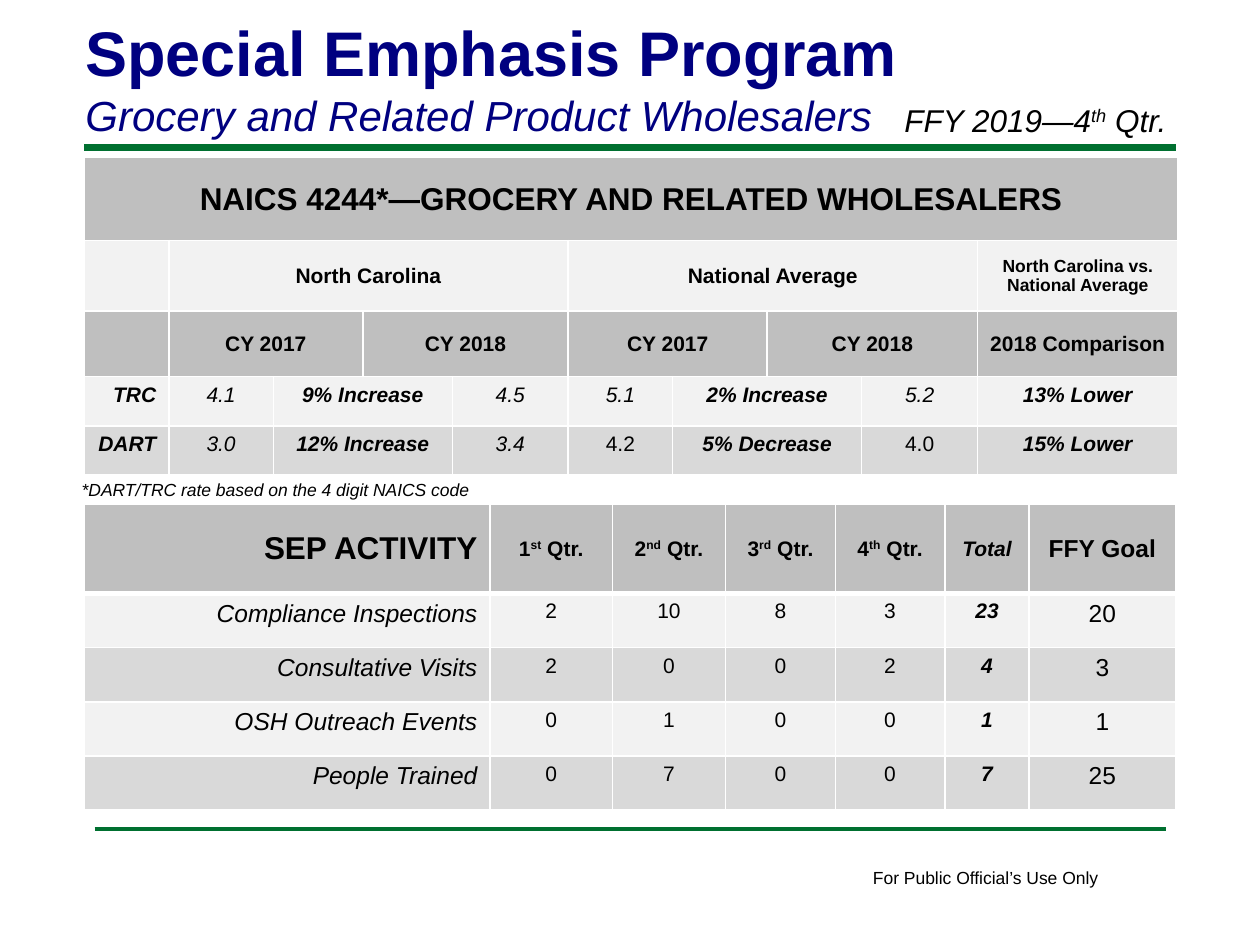
from lxml import etree
from pptx import Presentation
from pptx.dml.color import RGBColor
from pptx.enum.shapes import MSO_CONNECTOR
from pptx.enum.text import MSO_ANCHOR, MSO_AUTO_SIZE, PP_ALIGN
from pptx.oxml.ns import qn
from pptx.util import Inches, Pt

STRAIGHT = MSO_CONNECTOR.STRAIGHT
LEFT, CENTER, RIGHT = PP_ALIGN.LEFT, PP_ALIGN.CENTER, PP_ALIGN.RIGHT
MIDDLE, TOP = MSO_ANCHOR.MIDDLE, MSO_ANCHOR.TOP
GROW = MSO_AUTO_SIZE.SHAPE_TO_FIT_TEXT

FONT = "Arial"
BLACK = RGBColor(0, 0, 0)
NAVY = RGBColor(0x00, 0x00, 0x80)
GREEN = RGBColor(0x00, 0x70, 0x30)
HEAD = RGBColor(0xBF, 0xBF, 0xBF)
PALE = RGBColor(0xF2, 0xF2, 0xF2)
GRAY = RGBColor(0xD9, 0xD9, 0xD9)

RATE_COLS = [0.67, 0.83, 0.71, 0.71, 0.92, 0.83, 0.75, 0.75, 0.92, 1.59]
RATE_ROWS = [0.66, 0.56, 0.52, 0.39, 0.39]
RATE_FILLS = [HEAD, PALE, HEAD, PALE, GRAY]
RATE_SPANS = [(1, 1), (2, 2), (4, 1), (5, 1), (6, 2), (8, 1), (9, 1)]
RATES = [
    ["TRC", "4.1", "9% Increase", "4.5", "5.1", "2% Increase", "5.2", "13% Lower"],
    ["DART", "3.0", "12% Increase", "3.4", "4.2", "5% Decrease", "4.0", "15% Lower"],
]
PLAIN_RATES = ("4.2", "4.0")

WORK_COLS = [3.22, 0.97, 0.9, 0.87, 0.87, 0.67, 1.16]
WORK_ROWS = [0.71] + [0.43] * 4
WORK_FILLS = [HEAD, PALE, GRAY, PALE, GRAY]
WORK = [
    ["SEP ACTIVITY", "1^st^ Qtr.", "2^nd^ Qtr.", "3^rd^ Qtr.", "4^th^ Qtr.", "Total", "FFY Goal"],
    ["Compliance Inspections", "2", "10", "8", "3", "23", "20"],
    ["Consultative Visits", "2", "0", "0", "2", "4", "3"],
    ["OSH Outreach Events", "0", "1", "0", "0", "1", "1"],
    ["People Trained", "0", "7", "0", "0", "7", "25"],
]


def write(para, text, size=12, bold=False, italic=False, color=BLACK, align=LEFT):
    """Fill a paragraph with text, raising the parts between carets."""
    para.alignment = align
    for i, part in enumerate(text.split("^")):
        run = para.add_run()
        run.text = part
        font = run.font
        font.name, font.size = FONT, Pt(size)
        font.bold, font.italic = bold, italic
        font.color.rgb = color
        if i % 2:
            run._r.get_or_add_rPr().set("baseline", "30000")


def add_box(slide, x, y, w, h, wrap=True):
    """Add a text box and return its text frame."""
    frame = slide.shapes.add_textbox(Inches(x), Inches(y), Inches(w), Inches(h)).text_frame
    frame.word_wrap = wrap
    frame.auto_size = GROW
    return frame


def add_rule(slide, x, y, end, width):
    """Draw a level green rule."""
    rule = slide.shapes.add_connector(STRAIGHT, Inches(x), Inches(y), Inches(end), Inches(y))
    rule.line.color.rgb = GREEN
    rule.line.width = Pt(width)
    etree.SubElement(rule._element.spPr, qn("a:effectLst"))


def edge(cell, base):
    """Give a cell white borders, with its own width at the base."""
    props = cell._tc.get_or_add_tcPr()
    for side, width in (("L", 1), ("R", 1), ("T", 1), ("B", base)):
        line = etree.SubElement(props, qn("a:ln" + side), w=str(Pt(width)))
        fill = etree.SubElement(line, qn("a:solidFill"))
        etree.SubElement(fill, qn("a:srgbClr"), val="FFFFFF")


def add_grid(slide, top, cols, rows, fills, base=1):
    """Add an empty table with a fill for each row."""
    frame = slide.shapes.add_table(len(rows), len(cols), Inches(0.67), Inches(top),
                                   Inches(sum(cols)), Inches(sum(rows)))
    table = frame.table
    table.first_row = table.horz_banding = False
    for col, width in zip(table.columns, cols):
        col.width = Inches(width)
    for i, (row, height) in enumerate(zip(table.rows, rows)):
        row.height = Inches(height)
        for cell in row.cells:
            edge(cell, base if i == 0 else 1)
            cell.fill.solid()
            cell.fill.fore_color.rgb = fills[i]
    return table


def put(table, row, col, text, span=1, anchor=TOP, align=CENTER, **style):
    """Write one cell, merged over its span of columns."""
    cell = table.cell(row, col)
    if span > 1:
        cell.merge(table.cell(row, col + span - 1))
    cell.vertical_anchor = anchor
    write(cell.text_frame.paragraphs[0], text, align=align, **style)


def add_rates(slide):
    """Build the table of injury rates."""
    table = add_grid(slide, 1.25, RATE_COLS, RATE_ROWS, RATE_FILLS)
    head = {"anchor": MIDDLE, "bold": True}
    put(table, 0, 0, "NAICS 4244*—GROCERY AND RELATED WHOLESALERS", span=10, size=18, **head)
    put(table, 1, 1, "North Carolina", span=4, **head)
    put(table, 1, 5, "National Average", span=4, **head)
    put(table, 1, 9, "North Carolina vs. National Average", size=10, **head)
    for i, col in enumerate(range(1, 9, 2)):
        put(table, 2, col, f"CY {2017 + i % 2}", span=2, **head)
    put(table, 2, 9, "2018 Comparison", **head)
    for row, (name, *values) in enumerate(RATES, 3):
        put(table, row, 0, name, align=RIGHT, bold=True, italic=True)
        for (col, span), text in zip(RATE_SPANS, values):
            put(table, row, col, text, span=span, bold=col in (2, 6, 9),
                italic=text not in PLAIN_RATES)


def add_work(slide):
    """Build the table of program activity."""
    table = add_grid(slide, 4, WORK_COLS, WORK_ROWS, WORK_FILLS, base=3)
    for row, line in enumerate(WORK):
        head = row == 0
        for col, text in enumerate(line):
            name, total, goal = col == 0, col == 5, col == 6
            size = 18 if name and head else 14 if name or goal else 12
            put(table, row, col, text, size=size, bold=head or total,
                italic=total or (name and not head),
                align=RIGHT if name else CENTER, anchor=MIDDLE if head else TOP)


def main():
    """Build and save the slide."""
    deck = Presentation()
    deck.slide_width, deck.slide_height = Inches(10), Inches(7.5)
    slide = deck.slides.add_slide(deck.slide_layouts[6])
    add_rule(slide, 0.67, 1.17, 9.33, 4)
    add_rule(slide, 0.75, 6.58, 9.25, 2)
    foot = add_box(slide, 6.83, 6.83, 2.01, 0.27, wrap=False)
    write(foot.paragraphs[0], "For Public Official’s Use Only", size=10)
    title = add_box(slide, 0.58, 0.06, 8.25, 1.11)
    write(title.paragraphs[0], "Special Emphasis Program", size=36, bold=True, color=NAVY)
    write(title.add_paragraph(), "Grocery and Related Product Wholesalers",
          size=24, italic=True, color=NAVY)
    add_rates(slide)
    note = add_box(slide, 0.55, 3.75, 3.37, 0.27)
    write(note.paragraphs[0], "*DART/TRC rate based on the 4 digit NAICS code",
          size=10, italic=True)
    add_work(slide)
    term = add_box(slide, 7.08, 0.75, 2.5, 0.4)
    write(term.paragraphs[0], "FFY 2019—4^th^ Qtr.", size=18, italic=True)
    deck.save("out.pptx")


if __name__ == "__main__":
    main()
